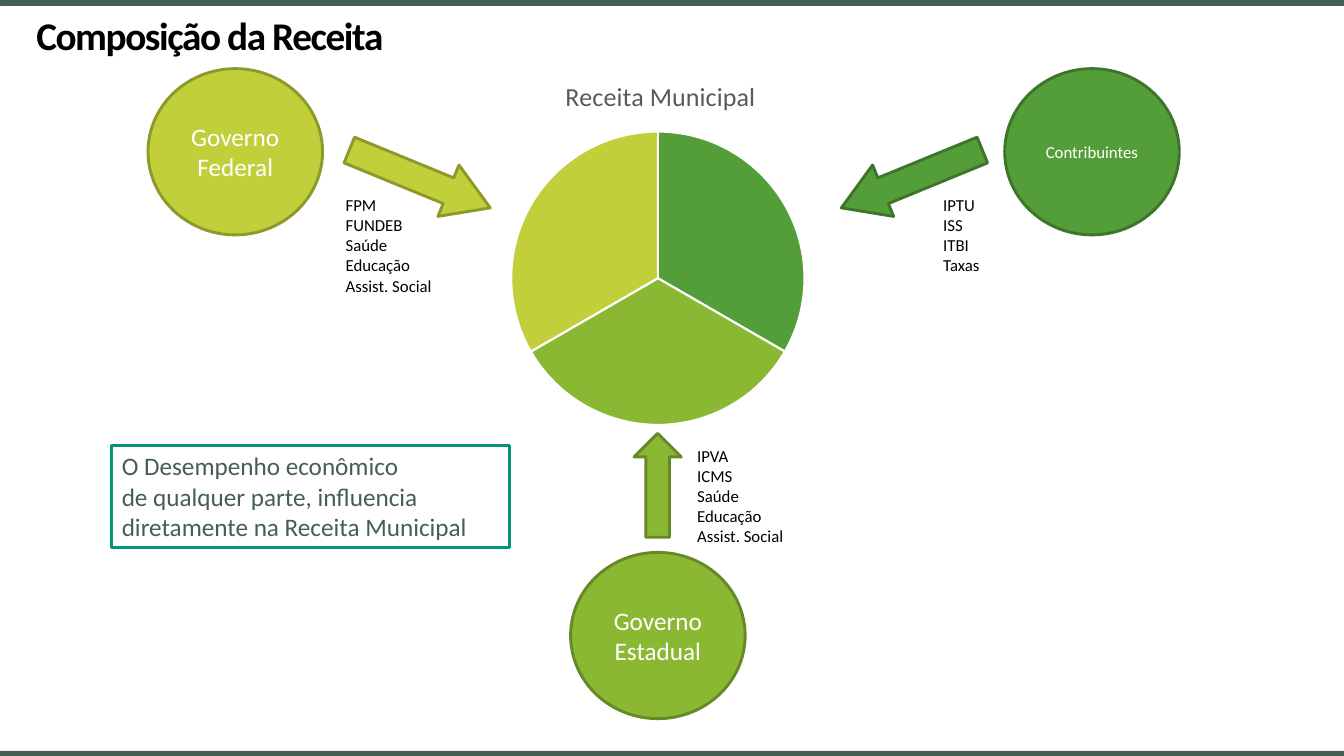
"""Builds the slide on how municipal revenue is composed."""
from dataclasses import dataclass

from lxml.etree import SubElement
from pptx import Presentation
from pptx.chart.data import CategoryChartData
from pptx.dml.color import RGBColor
from pptx.enum.chart import XL_CHART_TYPE
from pptx.enum.shapes import MSO_SHAPE
from pptx.enum.text import MSO_ANCHOR, PP_ALIGN
from pptx.oxml.ns import qn
from pptx.util import Cm, Pt


@dataclass(frozen=True)
class Theme:
    """Colours, type sizes and line widths of the slide."""
    font: str = "Calibri"
    black: str = "000000"
    white: str = "FFFFFF"
    grey: str = "595959"
    slate: str = "455F51"
    teal: str = "029676"
    green: tuple = ("549E39", "3E752A")
    leaf: tuple = ("8AB833", "668826")
    lime: tuple = ("C0CF3A", "8E992B")
    title: float = 28
    chart_title: float = 18.6
    large: float = 18
    small: float = 12
    outline: float = 2.08
    hairline: float = 0.25


THEME = Theme()
WIDTH, HEIGHT, BAR = 33.87, 19.05, 0.13
CIRCLE = (4.4, 4.19)

TITLE = "Composição da Receita"
CHART_TITLE = "Receita Municipal"
SHARES = {"1": 33, "2": 33, "3": 33}
SLICE_COLOURS = (THEME.green[0], THEME.leaf[0], THEME.lime[0])
NOTE = ["O Desempenho econômico", "de qualquer parte, influencia",
        "diretamente na Receita Municipal"]

SOURCES = [
    {"name": "Governo Federal", "size": THEME.large, "colours": THEME.lime,
     "circle": (3.73, 1.73),
     "arrow": (MSO_SHAPE.RIGHT_ARROW, (8.66, 3.81, 3.84, 1.4), 22.3, 0.813),
     "items": ["FPM", "FUNDEB", "Saúde", "Educação", "Assist. Social"],
     "list": (8.46, 4.78, 3.05, 2.82)},
    {"name": "Governo Estadual", "size": THEME.large, "colours": THEME.leaf,
     "circle": (14.38, 13.92),
     "arrow": (MSO_SHAPE.UP_ARROW, (15.98, 10.92, 1.19, 2.62), 0, 0.5),
     "items": ["IPVA", "ICMS", "Saúde", "Educação", "Assist. Social"],
     "list": (17.32, 11.1, 3.76, 2.82)},
    {"name": "Contribuintes", "size": THEME.small, "colours": THEME.green,
     "circle": (25.32, 1.73),
     "arrow": (MSO_SHAPE.LEFT_ARROW, (21.06, 3.81, 3.84, 1.4), -22.3, 0.813),
     "items": ["IPTU", "ISS", "ITBI", "Taxas"],
     "list": (23.52, 4.78, 1.63, 2.31)},
]


def colour(code):
    """Returns the colour of a hexadecimal code."""
    return RGBColor.from_string(code)


def lengths(values):
    """Turns centimetres into slide lengths."""
    return [Cm(value) for value in values]


def write(frame, lines, size=THEME.small, ink=THEME.black, bold=False,
          align=PP_ALIGN.LEFT, anchor=MSO_ANCHOR.TOP):
    """Fills a text frame with one paragraph per line."""
    frame.word_wrap = True
    frame.vertical_anchor = anchor
    for index, line in enumerate(lines):
        para = frame.add_paragraph() if index else frame.paragraphs[0]
        para.alignment = align
        span = para.add_run()
        span.text = line
        span.font.name = THEME.font
        span.font.size = Pt(size)
        span.font.bold = bold
        span.font.color.rgb = colour(ink)


def add_figure(page, preset, place, fill, line, weight=THEME.outline):
    """Adds a filled, outlined shape without shadow."""
    shape = page.shapes.add_shape(preset, *lengths(place))
    shape.shadow.inherit = False
    shape.fill.solid()
    shape.fill.fore_color.rgb = colour(fill)
    shape.line.color.rgb = colour(line)
    shape.line.width = Pt(weight)
    return shape


def place_part(part, position, inner=False, **fractions):
    """Gives a chart part a manual layout in fractions of the chart."""
    for old in part.findall(qn("c:layout")):
        part.remove(old)
    layout = SubElement(part, qn("c:layout"))
    part.insert(position, layout)
    manual = SubElement(layout, qn("c:manualLayout"))
    settings = {"layoutTarget": "inner"} if inner else {}
    settings.update(xMode="edge", yMode="edge", **fractions)
    for name, value in settings.items():
        SubElement(manual, qn(f"c:{name}")).set("val", str(value))


def add_title(page):
    """Places and formats the slide title."""
    title = page.shapes.title
    title.left, title.top, title.width, title.height = lengths((0.66, 0.25, 32.54, 1.27))
    write(title.text_frame, [TITLE], size=THEME.title, bold=True, anchor=MSO_ANCHOR.MIDDLE)
    for properties in title.element.xpath(".//a:rPr"):
        properties.set("spc", "-100")


def add_pie(page):
    """Adds the pie of municipal revenue."""
    data = CategoryChartData()
    data.categories = list(SHARES)
    data.add_series(CHART_TITLE, SHARES.values())
    place = lengths((10.74, 1.37, 11.68, 9.73))
    chart = page.shapes.add_chart(XL_CHART_TYPE.PIE, *place, data).chart
    chart.has_legend = False
    chart.font.name = THEME.font
    chart.font.size = Pt(10)
    chart.font.color.rgb = colour(THEME.black)
    chart.has_title = True
    write(chart.chart_title.text_frame, [CHART_TITLE], size=THEME.chart_title,
          ink=THEME.grey, align=PP_ALIGN.CENTER)
    chart.chart_title.include_in_layout = False
    plot = chart.plots[0]
    plot.vary_by_categories = False
    for index, fill in enumerate(SLICE_COLOURS):
        piece = plot.series[0].points[index].format
        piece.fill.solid()
        piece.fill.fore_color.rgb = colour(fill)
        piece.line.color.rgb = colour(THEME.white)
        piece.line.width = Pt(1.5)
    place_part(chart.element.xpath(".//c:title")[0], 1, x=0.29, y=0.05)
    place_part(chart.element.xpath(".//c:plotArea")[0], 0, inner=True,
               x=0.18, y=0.2, w=0.64, h=0.76)


def add_source(page, source):
    """Adds a revenue source: circle, arrow and list of items."""
    circle = add_figure(page, MSO_SHAPE.OVAL, source["circle"] + CIRCLE, *source["colours"])
    write(circle.text_frame, [source["name"]], size=source["size"], ink=THEME.white,
          align=PP_ALIGN.CENTER, anchor=MSO_ANCHOR.MIDDLE)
    preset, place, angle, head = source["arrow"]
    arrow = add_figure(page, preset, place, *source["colours"])
    arrow.rotation = angle
    arrow.adjustments[1] = head
    box = page.shapes.add_textbox(*lengths(source["list"]))
    write(box.text_frame, source["items"])


def main():
    """Builds and saves the deck."""
    deck = Presentation()
    deck.slide_width, deck.slide_height = lengths((WIDTH, HEIGHT))
    page = deck.slides.add_slide(deck.slide_layouts[5])
    for top in (0, HEIGHT - BAR):
        add_figure(page, MSO_SHAPE.RECTANGLE, (0, top, WIDTH, BAR),
                   THEME.slate, THEME.slate, weight=THEME.hairline)
    add_title(page)
    add_pie(page)
    for source in SOURCES:
        add_source(page, source)
    note = add_figure(page, MSO_SHAPE.RECTANGLE, (2.82, 11.23, 10.03, 2.57),
                      THEME.white, THEME.teal)
    write(note.text_frame, NOTE, size=THEME.large, ink=THEME.slate)
    deck.save("out.pptx")


if __name__ == "__main__":
    main()
